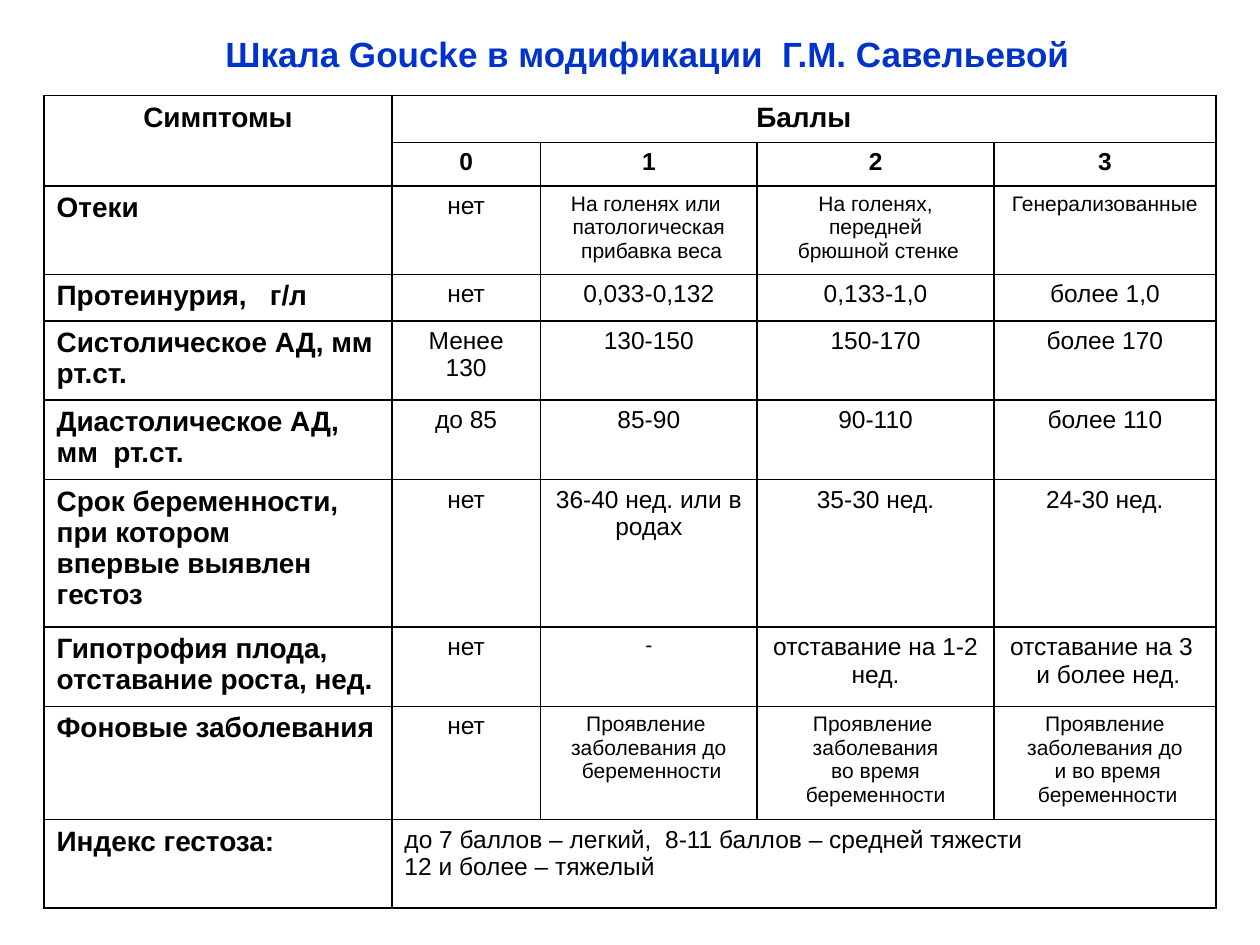
from dataclasses import dataclass

from lxml import etree
from pptx import Presentation
from pptx.dml.color import RGBColor
from pptx.enum import text
from pptx.oxml import ns
from pptx.util import Inches, Pt


@dataclass(frozen=True)
class Theme:
    font: str = "Arial"
    title_color: str = "0033CC"
    ink: str = "000000"
    paper: str = "FFFFFF"
    title_size: int = 20
    heading_size: int = 16
    body_size: int = 14
    small_size: int = 12
    border_width: int = 1


THEME = Theme()
LEFT, CENTER = text.PP_ALIGN.LEFT, text.PP_ALIGN.CENTER
TOP, MIDDLE = text.MSO_ANCHOR.TOP, text.MSO_ANCHOR.MIDDLE

TITLE = "Шкала Goucke в модификации  Г.М. Савельевой"
COLUMN_WIDTHS = [2.76, 1.18, 1.72, 1.88, 1.76]
ROW_HEIGHTS = [0.37, 0.33, 0.7, 0.37, 0.63, 0.63, 1.17, 0.63, 0.9, 0.7]
SCORES = ["0", "1", "2", "3"]
SYMPTOMS = [
    ["Отеки", "нет", "На голенях или \nпатологическая\n прибавка веса",
     "На голенях,\nпередней\n брюшной стенке", "Генерализованные"],
    ["Протеинурия,   г/л", "нет", "0,033-0,132", "0,133-1,0", "более 1,0"],
    ["Систолическое АД, мм\nрт.ст.", "Менее\n130", "130-150", "150-170", "более 170"],
    ["Диастолическое АД, мм  рт.ст.", "до 85", "85-90", "90-110", "более 110"],
    ["Срок беременности,\nпри котором\nвпервые выявлен гестоз", "нет",
     "36-40 нед. или в родах", "35-30 нед.", "24-30 нед."],
    ["Гипотрофия плода,\nотставание роста, нед.", "нет", "-",
     "отставание на 1-2 нед.", "отставание на 3 \n и более нед."],
    ["Фоновые заболевания", "нет", "Проявление \nзаболевания до\n беременности",
     "Проявление \nзаболевания\n во время \nбеременности",
     "Проявление\nзаболевания до\n и во время\n беременности"],
]
# Symptom -> score columns set in small type
SMALL_COLUMNS = {"Отеки": (2, 3, 4), "Гипотрофия плода,\nотставание роста, нед.": (2,),
                 "Фоновые заболевания": (2, 3, 4)}
INDEX_LABEL = "Индекс гестоза:"
INDEX_LEVELS = "до 7 баллов – легкий,  8-11 баллов – средней тяжести\n12 и более – тяжелый"


def write_text(frame, content, size=THEME.body_size, bold=False, color=THEME.ink,
               align=CENTER, anchor=MIDDLE):
    """Fill a text frame, one paragraph for each line of content."""
    frame.vertical_anchor = anchor
    for number, line in enumerate(content.split("\n")):
        paragraph = frame.add_paragraph() if number else frame.paragraphs[0]
        paragraph.alignment = align
        run = paragraph.add_run()
        run.text = line
        run.font.name = THEME.font
        run.font.size = Pt(size)
        run.font.bold = bold
        run.font.color.rgb = RGBColor.from_string(color)


def write_label(cell, content, **layout):
    write_text(cell.text_frame, content, size=THEME.heading_size, bold=True, **layout)


def style_cell(cell):
    """Give a cell a plain fill and a border on all four sides."""
    cell.fill.solid()
    cell.fill.fore_color.rgb = RGBColor.from_string(THEME.paper)
    properties = cell._tc.get_or_add_tcPr()
    for position, side in enumerate(("a:lnL", "a:lnR", "a:lnT", "a:lnB")):
        border = etree.Element(ns.qn(side), w=str(Pt(THEME.border_width)))
        fill = etree.SubElement(border, ns.qn("a:solidFill"))
        etree.SubElement(fill, ns.qn("a:srgbClr"), val=THEME.ink)
        properties.insert(position, border)


def add_title(slide):
    frame = slide.shapes.add_textbox(
        Inches(1.69), Inches(0.21), Inches(7), Inches(0.43)).text_frame
    frame.word_wrap = False
    frame.auto_size = text.MSO_AUTO_SIZE.SHAPE_TO_FIT_TEXT
    write_text(frame, TITLE, size=THEME.title_size, bold=True,
               color=THEME.title_color, align=LEFT)


def add_grid(slide):
    table = slide.shapes.add_table(
        len(ROW_HEIGHTS), len(COLUMN_WIDTHS), Inches(0.35), Inches(0.76),
        Inches(sum(COLUMN_WIDTHS)), Inches(sum(ROW_HEIGHTS))).table
    table.first_row = table.horz_banding = False
    for column, width in zip(table.columns, COLUMN_WIDTHS):
        column.width = Inches(width)
    for row, height in zip(table.rows, ROW_HEIGHTS):
        row.height = Inches(height)
    for cell in table.iter_cells():
        style_cell(cell)
    return table


def fill_header(table):
    table.cell(0, 0).merge(table.cell(1, 0))
    table.cell(0, 1).merge(table.cell(0, 4))
    write_label(table.cell(0, 0), "Симптомы")
    write_label(table.cell(0, 1), "Баллы", anchor=TOP)
    for column, score in enumerate(SCORES, start=1):
        write_text(table.cell(1, column).text_frame, score, bold=True, anchor=TOP)


def fill_symptoms(table):
    for row, (symptom, *signs) in enumerate(SYMPTOMS, start=2):
        write_label(table.cell(row, 0), symptom, align=LEFT)
        small = SMALL_COLUMNS.get(symptom, ())
        for column, sign in enumerate(signs, start=1):
            size = THEME.small_size if column in small else THEME.body_size
            write_text(table.cell(row, column).text_frame, sign, size=size)


def fill_index(table):
    last = len(ROW_HEIGHTS) - 1
    table.cell(last, 1).merge(table.cell(last, 4))
    write_label(table.cell(last, 0), INDEX_LABEL, align=LEFT)
    write_text(table.cell(last, 1).text_frame, INDEX_LEVELS, align=LEFT)


def main():
    deck = Presentation()
    deck.slide_width, deck.slide_height = Inches(10), Inches(7.5)
    slide = deck.slides.add_slide(deck.slide_layouts[6])
    table = add_grid(slide)
    fill_header(table)
    fill_symptoms(table)
    fill_index(table)
    add_title(slide)
    deck.save("out.pptx")


if __name__ == "__main__":
    main()
